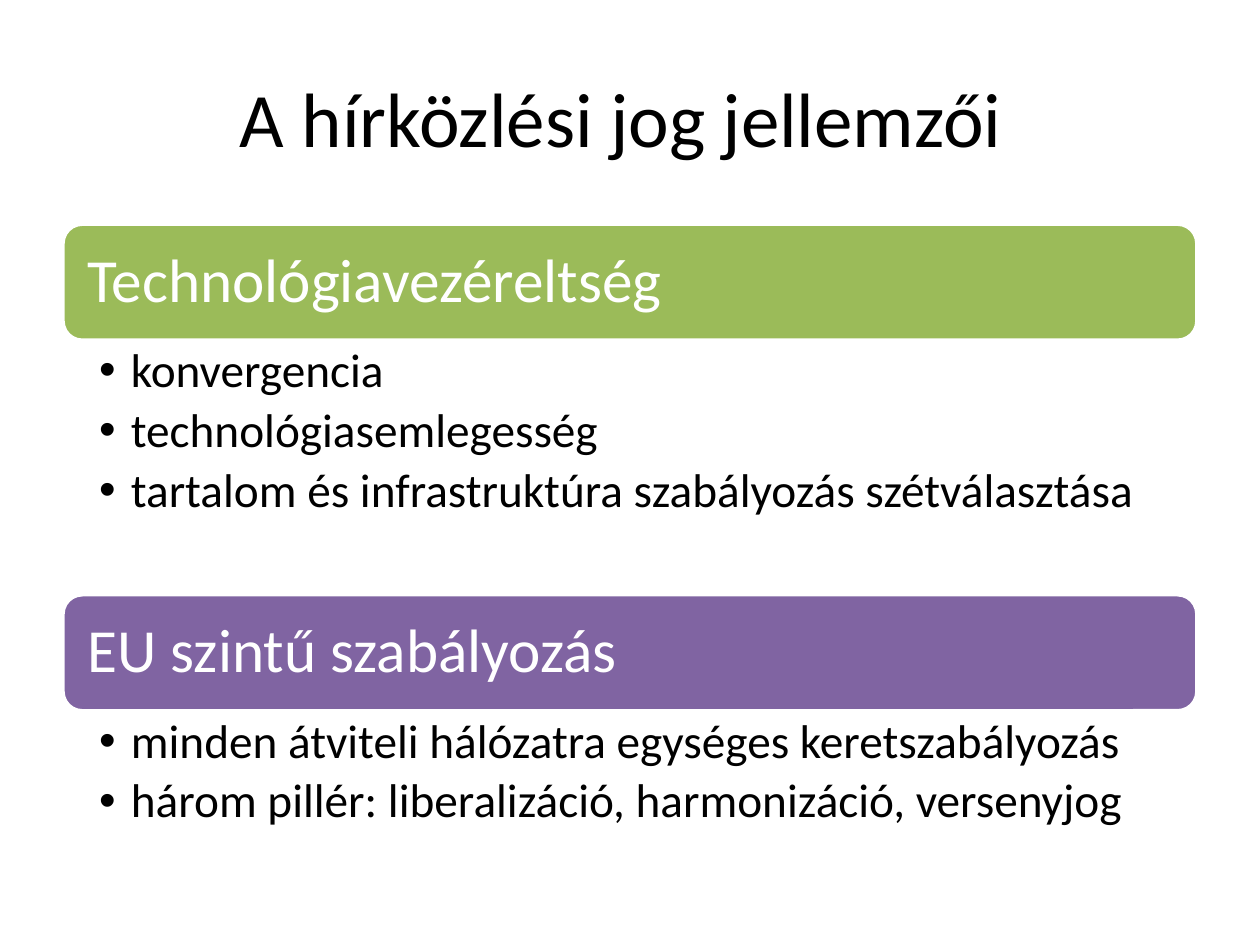
from pptx import Presentation
from pptx.dml.color import RGBColor
from pptx.enum.shapes import MSO_SHAPE
from pptx.enum.text import MSO_ANCHOR, PP_ALIGN
from pptx.util import Cm, Pt
from lxml import etree

ROUND = MSO_SHAPE.ROUNDED_RECTANGLE
MIDDLE, TOP = MSO_ANCHOR.MIDDLE, MSO_ANCHOR.TOP
LEFT, CENTER = PP_ALIGN.LEFT, PP_ALIGN.CENTER
NS = "{http://schemas.openxmlformats.org/drawingml/2006/main}"


def color(code):
    return RGBColor.from_string(code)


def write(frame, lines, look, size, ink, para):
    """Fill a text frame with one paragraph per line."""
    for key, val in look.items():
        setattr(frame, key, val)
    for i, line in enumerate(lines):
        p = frame.add_paragraph() if i else frame.paragraphs[0]
        for key, val in para.items():
            setattr(p, key, val)
        run = p.add_run()
        run.text = line
        run.font.name = "Calibri"
        run.font.size = Pt(size)
        run.font.color.rgb = color(ink)


deck = Presentation()
deck.slide_width, deck.slide_height = Cm(25.4), Cm(19.05)
slide = deck.slides.add_slide(deck.slide_layouts[5])

# Shared measures
left, width = Cm(1.27), Cm(22.86)
bar = Cm(2.34)
inset = Cm(0.38)

# Title
title = slide.shapes.title
title.left, title.top, title.width, title.height = left, Cm(0.76), width, Cm(3.18)
write(title.text_frame, ["A hírközlési jog jellemzői "],
      {"vertical_anchor": MIDDLE, "word_wrap": True}, 44, "000000",
      {"alignment": CENTER})

# Text formats
head_look = {"vertical_anchor": MIDDLE, "word_wrap": True,
             "margin_left": inset, "margin_right": inset,
             "margin_top": inset, "margin_bottom": inset}
list_look = {"vertical_anchor": TOP, "word_wrap": True,
             "margin_left": Cm(0.73), "margin_right": Cm(0.68),
             "margin_top": Cm(0.13), "margin_bottom": Cm(0.13)}
head_para = {"alignment": LEFT, "line_spacing": 0.9}
list_para = {"alignment": LEFT, "line_spacing": 0.9, "level": 1,
             "space_after": Pt(5)}

# Sections: heading, fill, list height, list items
parts = [
    ("Technológiavezéreltség", "9BBB59", Cm(5.13),
     ["konvergencia", "technológiasemlegesség",
      "tartalom és infrastruktúra szabályozás szétválasztása"]),
    ("EU szintű szabályozás", "8064A2", Cm(2.62),
     ["minden átviteli hálózatra egységes keretszabályozás",
      "három pillér: liberalizáció, harmonizáció, versenyjog"]),
]

top = Cm(4.52)
for head, fill, tall, items in parts:
    # Heading bar
    box = slide.shapes.add_shape(ROUND, left, top, width, bar)
    box.shadow.inherit = False
    box.fill.solid()
    box.fill.fore_color.rgb = color(fill)
    box.line.color.rgb = color("FFFFFF")
    box.line.width = Pt(2)
    write(box.text_frame, [head], head_look, 35, "FFFFFF", head_para)
    top += bar

    # Bulleted list
    body = slide.shapes.add_textbox(left, top, width, tall)
    write(body.text_frame, items, list_look, 27, "000000", list_para)
    for p in body.text_frame.paragraphs:
        props = p._p.get_or_add_pPr()
        props.set("marL", str(Cm(0.64)))
        props.set("indent", str(Cm(-0.64)))
        etree.SubElement(props, NS + "buFont", typeface="Arial")
        etree.SubElement(props, NS + "buChar", char="•")
    top += tall

deck.save("out.pptx")
